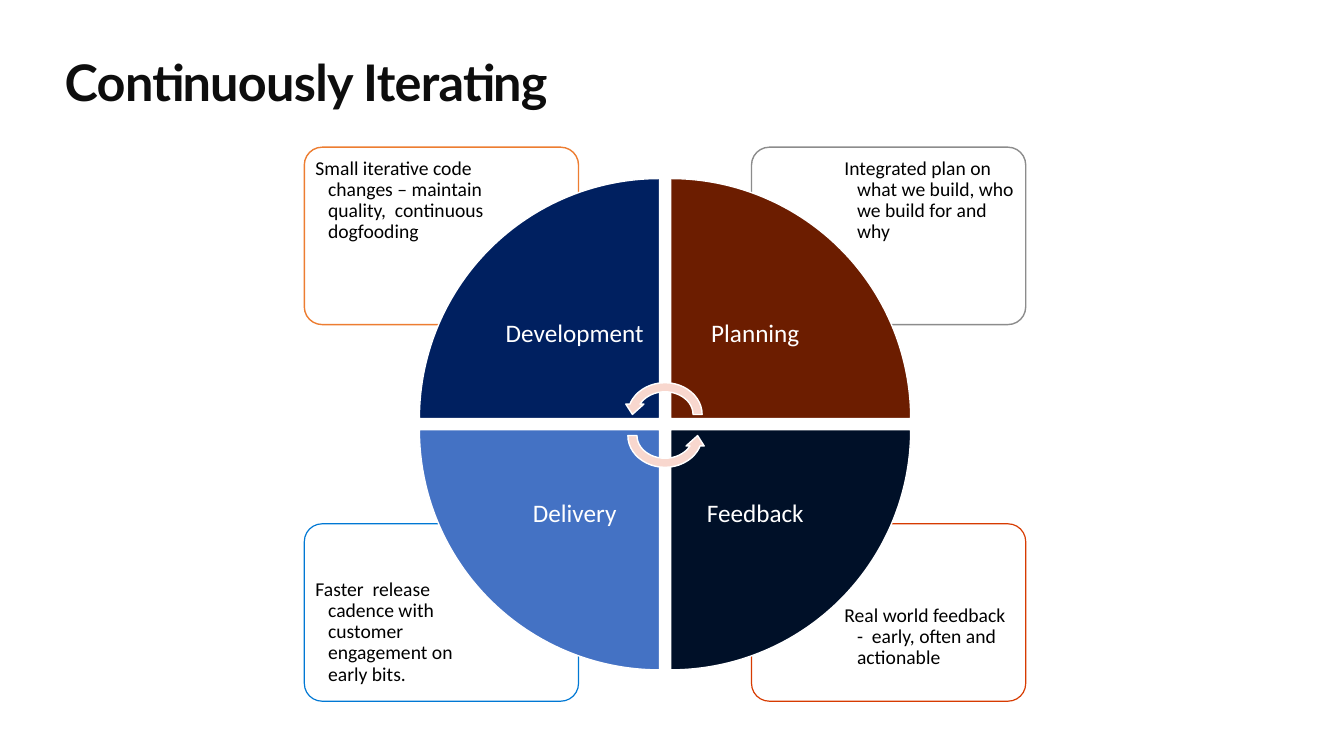
from pptx import Presentation
from pptx.dml.color import RGBColor
from pptx.enum.shapes import MSO_SHAPE as SHAPE
from pptx.enum.text import MSO_ANCHOR as ANCHOR, MSO_AUTO_SIZE as AUTO, PP_ALIGN as ALIGN
from pptx.oxml.ns import qn
from pptx.util import Cm, Pt

COLORS = {
    "title": "0D0D0D", "text": "000000", "white": "FFFFFF", "arrow": "F8D7CE",
    "navy": "002060", "brown": "6C1D00", "midnight": "001028", "blue": "4472C4",
    "orange": "ED7D31", "gray": "8C8C8C", "red": "D73B01", "azure": "0078D4",
}
CX, CY = 16.76, 10.69  # centre of the wheel, cm


def add_shape(kind, box, fill, line, width=1, rotation=0):
    sp = s.shapes.add_shape(kind, *map(Cm, box))
    sp.shadow.inherit = False
    sp.fill.solid()
    sp.fill.fore_color.rgb = RGBColor.from_string(COLORS[fill])
    sp.line.color.rgb = RGBColor.from_string(COLORS[line])
    sp.line.width = Pt(width)
    sp.rotation = rotation
    return sp


def write(sp, text, size, color, font="Calibri", bold=False, inset=0.0,
          align=ALIGN.LEFT, anchor=ANCHOR.TOP, hanging=0.0, spacing=0.9):
    tf = sp.text_frame
    tf.word_wrap, tf.auto_size, tf.vertical_anchor = True, AUTO.NONE, anchor
    tf.margin_left = tf.margin_right = tf.margin_top = tf.margin_bottom = Cm(inset)
    p = tf.paragraphs[0]
    p.alignment, p.line_spacing = align, spacing
    if hanging:
        pPr = p._p.get_or_add_pPr()
        pPr.set("marL", str(Cm(hanging)))
        pPr.set("indent", str(-Cm(hanging)))
    r = p.add_run()
    r.text = text
    r.font.name, r.font.size, r.font.bold = font, Pt(size), bold
    r.font.color.rgb = RGBColor.from_string(COLORS[color])
    return r


prs = Presentation()
prs.slide_width, prs.slide_height = Cm(33.87), Cm(19.05)
s = prs.slides.add_slide(prs.slide_layouts[5])

title = s.shapes.title
title.left, title.top, title.width, title.height = Cm(1.63), Cm(1.27), Cm(30.61), Cm(1.55)
r = write(title, "Continuously Iterating", 36, "title", font="Lato", bold=True,
          anchor=ANCHOR.MIDDLE, spacing=1.0)
r.font._element.set("spc", "-50")

# side, row, label, wedge fill, rotation, card line, line width, note, note drop
quadrants = [
    (-1, -1, "Development", "navy", 0, "orange", 1,
     "Small iterative code changes – maintain quality,  continuous dogfooding", 0),
    (1, -1, "Planning", "brown", 90, "gray", 1,
     "Integrated plan on what we build, who we build for and why", 0),
    (1, 1, "Feedback", "midnight", 180, "red", 0.85,
     "Real world feedback -  early, often and actionable", 0.66),
    (-1, 1, "Delivery", "blue", 270, "azure", 0.85,
     "Faster  release cadence with customer engagement on early bits.", 0),
]
# reach from the centre (x, y), then width and height, cm
sizes = {
    "card": (9.09, 6.98, 6.91, 4.47),
    "note": (8.99, 6.88, 4.65, 3.15),
    "wedge": (6.19, 6.19, 6.05, 6.05),
    "label": (4.42, 4.42, 4.29, 4.29),
}
for side, row, label, fill, rotation, line, width, note, drop in quadrants:
    boxes = {
        part: (CX - x if side < 0 else CX + x - w, CY - y if row < 0 else CY + y - h, w, h)
        for part, (x, y, w, h) in sizes.items()
    }
    card = add_shape(SHAPE.ROUNDED_RECTANGLE, boxes["card"], "white", line, width)
    card.adjustments[0] = 0.1
    add_shape(SHAPE.PIE_WEDGE, boxes["wedge"], fill, "white", rotation=rotation)

    x, y, w, h = boxes["note"]
    note_box = s.shapes.add_textbox(Cm(x), Cm(y + drop), Cm(w), Cm(h - drop))
    write(note_box, note, 14, "text", inset=0.18, hanging=0.32)
    label_box = s.shapes.add_textbox(*map(Cm, boxes["label"]))
    write(label_box, label, 18, "white", inset=0.36, align=ALIGN.CENTER, anchor=ANCHOR.MIDDLE)

for top, rotation in ((9.53, 0), (10.06, 180)):
    arrow = add_shape(SHAPE.CIRCULAR_ARROW, (CX - 1.05, top, 2.1, 1.83), "arrow", "white",
                      rotation=rotation)
    arrow._element.spPr.find(qn("a:xfrm")).set("flipH", "1")

prs.save("out.pptx")
